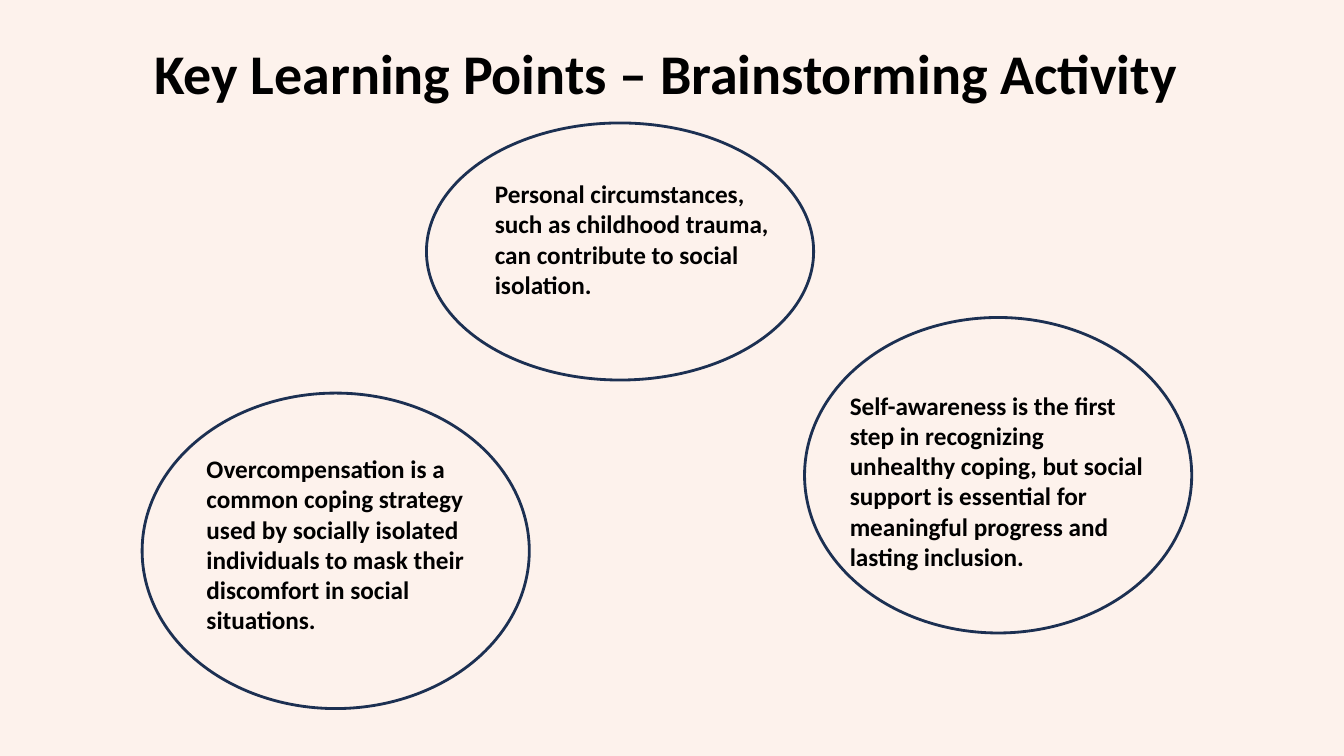
import pptx
import pptx.util
import pptx.dml.color
import pptx.enum.shapes
import pptx.enum.text

TITLE = "Key Learning Points – Brainstorming Activity "
COLUMNS, ROWS = 133.3, 75
TITLE_ROWS = 11.1
BUBBLE_COLUMNS, TEXT_COLUMNS = 38.4, 31.7
LEARNING_POINTS = [
    {"text": "Personal circumstances, such as childhood trauma, can contribute "
             "to social isolation.",
     "bubble": (42.3, 12.2), "bubble_rows": 25.5,
     "inset": (5.8, 5), "text_rows": 15.5},
    {"text": "Overcompensation is a common coping strategy used by socially "
             "isolated individuals to mask their discomfort in social situations.",
     "bubble": (14.1, 39), "bubble_rows": 31.3,
     "inset": (5.4, 5.5), "text_rows": 21.5},
    {"text": "Self-awareness is the first step in recognizing unhealthy coping, "
             "but social support is essential for meaningful progress and "
             "lasting inclusion.",
     "bubble": (79.8, 31.5), "bubble_rows": 31.3,
     "inset": (3.5, 6.7), "text_rows": 19.2},
]
FONT = "Calibri"
BLACK = pptx.dml.color.RGBColor(0x00, 0x00, 0x00)
NAVY = pptx.dml.color.RGBColor(0x1C, 0x30, 0x52)
CREAM = pptx.dml.color.RGBColor(0xFD, 0xF2, 0xEC)


def grid(*cells):
    return [pptx.util.Inches(cell / 10) for cell in cells]


def add_text(slide, text, box, size):
    text_frame = slide.shapes.add_textbox(*grid(*box)).text_frame
    text_frame.word_wrap = True
    text_frame.auto_size = pptx.enum.text.MSO_AUTO_SIZE.SHAPE_TO_FIT_TEXT
    text_frame.text = text
    paragraph = text_frame.paragraphs[0]
    font = paragraph.runs[0].font
    font.name = FONT
    font.size = pptx.util.Pt(size)
    font.bold = True
    font.color.rgb = BLACK
    return paragraph


def add_bubble(slide, box):
    bubble = slide.shapes.add_shape(
        pptx.enum.shapes.MSO_SHAPE.OVAL, *grid(*box))
    bubble.shadow.inherit = False
    bubble.fill.background()
    bubble.line.color.rgb = NAVY
    bubble.line.width = pptx.util.Pt(2)


def main():
    presentation = pptx.Presentation()
    presentation.slide_width, presentation.slide_height = grid(COLUMNS, ROWS)
    slide = presentation.slides.add_slide(presentation.slide_layouts[6])
    slide.background.fill.solid()
    slide.background.fill.fore_color.rgb = CREAM

    title = add_text(slide, TITLE, (0, 0, COLUMNS, TITLE_ROWS), 40)
    title.alignment = pptx.enum.text.PP_ALIGN.CENTER
    title.line_spacing = 1.5

    for point in LEARNING_POINTS:
        left, top = point["bubble"]
        inset_left, inset_top = point["inset"]
        add_bubble(slide, (left, top, BUBBLE_COLUMNS, point["bubble_rows"]))
        add_text(slide, point["text"],
                 (left + inset_left, top + inset_top,
                  TEXT_COLUMNS, point["text_rows"]), 18)

    presentation.save("out.pptx")


if __name__ == "__main__":
    main()
